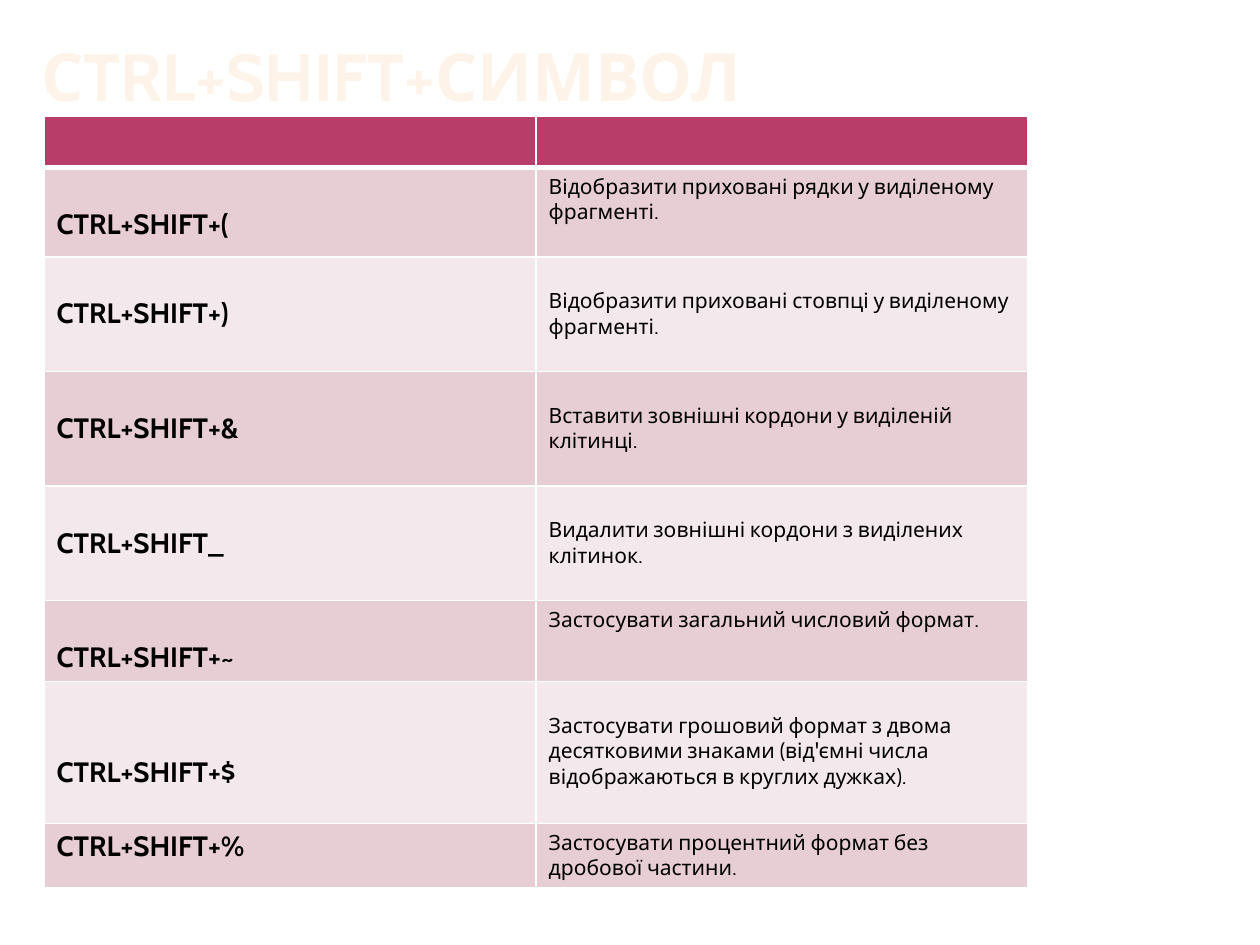
from lxml.etree import SubElement
from pptx import Presentation
from pptx.dml.color import RGBColor
from pptx.enum.text import MSO_ANCHOR, MSO_AUTO_SIZE, PP_ALIGN
from pptx.oxml.ns import qn
from pptx.util import Inches, Pt

COLORS = {"title": "FEF3E8", "header": "B83D68", "odd": "E6CED4",
          "even": "F3E8EB", "text": "000000", "border": "FFFFFF"}
FONT = "Cabin"
SLIDE_WIDTH, SLIDE_HEIGHT = Inches(10), Inches(7.5)
TITLE_BOX = (0.028, -0.045, 0.792, 0.167)
TABLE_BOX = (0.035, 0.123, 0.781, 0.815)
HEADER_HEIGHT = 0.40
PADDING = 0.05
KEY_SIZE, KEY_LINE = 16, 0.27
ACTION_SIZE, ACTION_LINE = 12, 0.20

# Row height, key, lines above the key, action, lines above the action
SHORTCUTS = [
    (0.71, "CTRL+SHIFT+(", 1, "Відобразити приховані рядки у виділеному фрагменті.", 0),
    (0.91, "CTRL+SHIFT+)", 1, "Відобразити приховані стовпці у виділеному фрагменті.", 1),
    (0.91, "CTRL+SHIFT+&", 1, "Вставити зовнішні кордони у виділеній клітинці.", 1),
    (0.91, "CTRL+SHIFT_", 1, "Видалити зовнішні кордони з виділених клітинок.", 1),
    (0.64, "CTRL+SHIFT+~", 1, "Застосувати загальний числовий формат.", 0),
    (1.13, "CTRL+SHIFT+$", 2, "Застосувати грошовий формат з двома десятковими знаками "
                              "(від'ємні числа відображаються в круглих дужках).", 1),
    (0.50, "CTRL+SHIFT+%", 0, "Застосувати процентний формат без дробової частини.", 0),
]


def place(box):
    """Turn shares of the slide into left, top, width and height."""
    left, top, width, height = box
    return (int(left * SLIDE_WIDTH), int(top * SLIDE_HEIGHT),
            int(width * SLIDE_WIDTH), int(height * SLIDE_HEIGHT))


def style_font(font, size, bold, color):
    """Set the face, size, weight and colour of a font."""
    font.name, font.size, font.bold = FONT, Pt(size), bold
    font.color.rgb = RGBColor.from_string(COLORS[color])


def style_cell(cell, fill, bottom_width=1):
    """Give a cell its white borders and its fill."""
    properties = cell._tc.get_or_add_tcPr()
    for side, width in (("L", 1), ("R", 1), ("T", 1), ("B", bottom_width)):
        line = SubElement(properties, qn(f"a:ln{side}"), w=str(Pt(width)))
        SubElement(SubElement(line, qn("a:solidFill")), qn("a:srgbClr"), val=COLORS["border"])
    cell.fill.solid()
    cell.fill.fore_color.rgb = RGBColor.from_string(COLORS[fill])


def write_cell(cell, text, size, bold, offset):
    """Write text in a cell, the given offset below its padding."""
    cell.margin_top = Inches(PADDING + offset)
    cell.text_frame.text = text
    style_font(cell.text_frame.paragraphs[0].runs[0].font, size, bold, "text")


def add_title(slide, box):
    """Place and format the slide title."""
    title = slide.shapes.title
    title.left, title.top, title.width, title.height = place(box)
    frame = title.text_frame
    frame.text = "СTRL+SHIFT+СИМВОЛ"
    frame.word_wrap = True
    frame.auto_size = MSO_AUTO_SIZE.NONE
    frame.vertical_anchor = MSO_ANCHOR.BOTTOM
    frame.margin_left = frame.margin_right = Inches(0.05)
    frame.margin_top = frame.margin_bottom = 0
    frame.paragraphs[0].alignment = PP_ALIGN.LEFT
    style_font(frame.paragraphs[0].runs[0].font, 38, True, "title")


def add_shortcut_table(slide, box):
    """Build the table of shortcuts and what they do."""
    table = slide.shapes.add_table(len(SHORTCUTS) + 1, 2, *place(box)).table
    table.rows[0].height = Inches(HEADER_HEIGHT)
    for header in table.rows[0].cells:
        style_cell(header, "header", 3)
    for number, (height, key, key_gap, action, action_gap) in enumerate(SHORTCUTS, 1):
        row = table.rows[number]
        row.height = Inches(height)
        for cell in row.cells:
            style_cell(cell, "odd" if number % 2 else "even")
        write_cell(row.cells[0], key, KEY_SIZE, True, key_gap * KEY_LINE)
        write_cell(row.cells[1], action, ACTION_SIZE, False, action_gap * ACTION_LINE)


def main():
    """Build and save the slide."""
    presentation = Presentation()
    presentation.slide_width, presentation.slide_height = SLIDE_WIDTH, SLIDE_HEIGHT
    slide = presentation.slides.add_slide(presentation.slide_layouts[5])
    add_title(slide, TITLE_BOX)
    add_shortcut_table(slide, TABLE_BOX)
    presentation.save("out.pptx")


if __name__ == "__main__":
    main()
